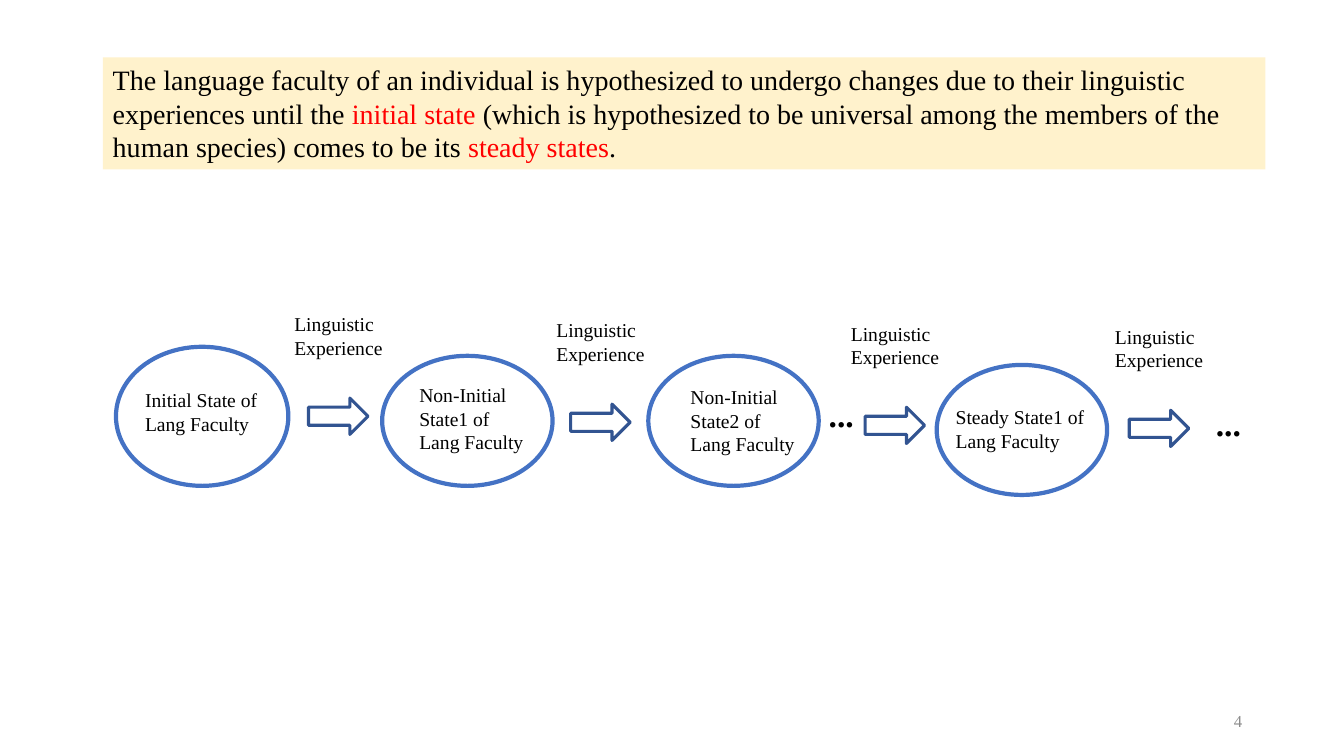
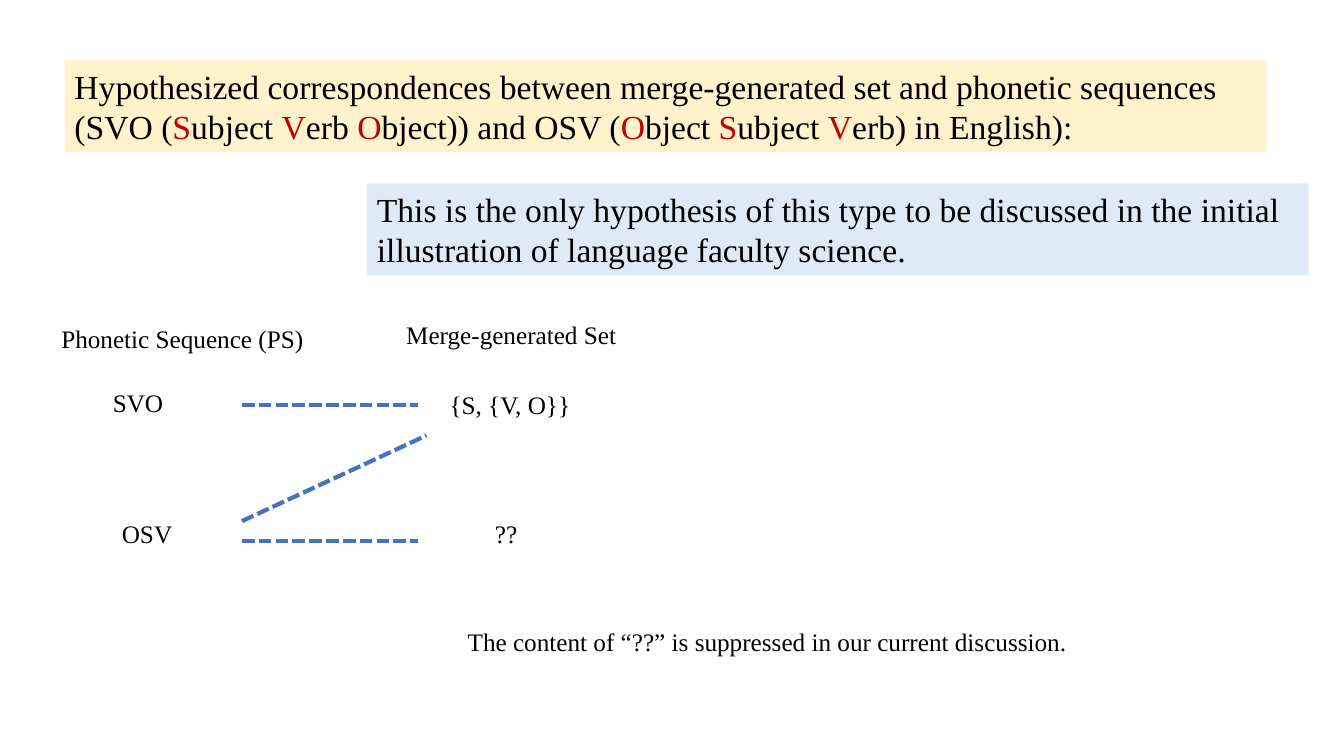
from pptx import Presentation
from pptx.dml.color import RGBColor
from pptx.enum.dml import MSO_LINE
from pptx.enum.shapes import MSO_CONNECTOR, MSO_SHAPE as SHAPE
from pptx.enum.text import MSO_ANCHOR as ANCHOR, MSO_AUTO_SIZE as AUTO, PP_ALIGN as ALIGN
from pptx.oxml.ns import qn
from pptx.util import Pt
from lxml import etree

SCALE = 9144
FONT = "Times New Roman"
BLACK, GREY = "000000", "8C8C8C"
RED, DARK_RED = "FF0000", "C00000"
BLUE, DARK_BLUE = "4472C4", "325491"
CREAM, PALE_BLUE = "FFF2CC", "DEEBF7"


def px(n):
    return round(n * SCALE)


def rgb(value):
    return RGBColor.from_string(value)


def write(tf, text, size=18, color=BLACK, accent=RED, bold=False,
          align=ALIGN.LEFT, anchor=ANCHOR.TOP, wrap=True, grow=True):
    tf.word_wrap = wrap
    tf.auto_size = AUTO.SHAPE_TO_FIT_TEXT if grow else AUTO.NONE
    tf.vertical_anchor = anchor
    p = tf.paragraphs[0]
    p.alignment = align
    for i, part in enumerate(text.split("*")):
        r = p.add_run()
        r.text = part
        r.font.name = FONT
        r.font.size = Pt(size)
        r.font.bold = bold
        r.font.color.rgb = rgb(accent if i % 2 else color)


def add_text(slide, box, text, **fmt):
    sp = slide.shapes.add_textbox(*map(px, box))
    write(sp.text_frame, text, **fmt)


def add_shape(slide, kind, box, fill=None, line=None, width=3):
    sp = slide.shapes.add_shape(kind, *map(px, box))
    sp.shadow.inherit = False
    if fill:
        sp.fill.solid()
        sp.fill.fore_color.rgb = rgb(fill)
    else:
        sp.fill.background()
    if line:
        sp.line.color.rgb = rgb(line)
        sp.line.width = Pt(width)
    else:
        sp.line.fill.background()
    return sp


def add_band(slide, box, text, fill=CREAM, **fmt):
    sp = add_shape(slide, SHAPE.RECTANGLE, box, fill=fill)
    write(sp.text_frame, text, **fmt)


def add_state(slide, box, text, label):
    x, y, w, h = box
    dx, dy, label_w, label_h = label
    add_shape(slide, SHAPE.OVAL, box, line=BLUE)
    add_text(slide, (x + dx, y + dy, label_w, label_h), text, size=14)


def add_experience(slide, x, y):
    add_shape(slide, SHAPE.RIGHT_ARROW, (x + 24, y + 90, 59, 36),
              line=DARK_BLUE, width=2.25)
    add_text(slide, (x, y, 118, 57), "Linguistic Experience", size=14)


def add_dashes(slide, x1, y1, x2, y2):
    line = slide.shapes.add_connector(MSO_CONNECTOR.STRAIGHT, *map(px, (x1, y1, x2, y2)))
    line.line.color.rgb = rgb(BLUE)
    line.line.width = Pt(3)
    line.line.dash_style = MSO_LINE.SQUARE_DOT
    etree.SubElement(line._element.spPr, qn("a:effectLst"))


def add_blank(prs):
    return prs.slides.add_slide(prs.slide_layouts[6])


def build_states(prs):
    slide = add_blank(prs)
    add_text(slide, (942, 695, 300, 40), "4", size=12, color=GREY,
             align=ALIGN.RIGHT, anchor=ANCHOR.MIDDLE, grow=False)
    states = [
        ((115, 344, 171, 138), "Initial State of Lang Faculty", (19, 36, 134, 61)),
        ((379, 353, 169, 129), "Non-Initial State1 of Lang Faculty", (27, 22, 132, 81)),
        ((643, 353, 169, 129), "Non-Initial State2 of Lang Faculty", (32, 24, 132, 81)),
        ((929, 362, 169, 129), "Steady State1 of Lang Faculty", (9, 35, 150, 57)),
    ]
    for box, text, label in states:
        add_state(slide, box, text, label)
    for x, y in [(282, 305), (542, 311), (834, 314), (1096, 317)]:
        add_experience(slide, x, y)
    for x, y in [(812, 386), (1196, 395)]:
        add_text(slide, (x, y, 45, 50), "...", size=24, bold=True, wrap=False)
    add_band(slide, (102, 57, 1153, 111),
             "The language faculty of an individual is hypothesized to undergo changes "
             "due to their linguistic experiences until the *initial state* (which is "
             "hypothesized to be universal among the members of the human species) "
             "comes to be its *steady states*.", size=20)


def build_correspondences(prs):
    slide = add_blank(prs)
    add_band(slide, (64, 60, 1192, 91),
             "Hypothesized correspondences between merge-generated set and phonetic "
             "sequences (SVO (*S*ubject *V*erb *O*bject)) and OSV "
             "(*O*bject *S*ubject *V*erb) in English):", size=24, accent=DARK_RED)
    add_band(slide, (364, 182, 934, 91),
             "This is the only hypothesis of this type to be discussed in the initial "
             "illustration of language faculty science.", fill=PALE_BLUE, size=24)
    labels = [
        ((51, 316, 263, 40), "Phonetic Sequence (PS)"),
        ((393, 312, 237, 40), "Merge-generated Set"),
        ((102, 379, 71, 40), "SVO"),
        ((436, 381, 141, 40), "{S, {V, O}}"),
        ((111, 509, 71, 40), "OSV"),
        ((481, 509, 43, 40), "??"),
        ((454, 616, 620, 71), "The content of “??” is suppressed in our current discussion."),
    ]
    for box, text in labels:
        add_text(slide, box, text, wrap=False)
    for ends in [(240, 402, 415, 402), (240, 517, 423, 432), (240, 537, 415, 537)]:
        add_dashes(slide, *ends)


def main():
    prs = Presentation()
    prs.slide_width, prs.slide_height = px(1333), px(750)
    build_states(prs)
    build_correspondences(prs)
    prs.save("out.pptx")


if __name__ == "__main__":
    main()
